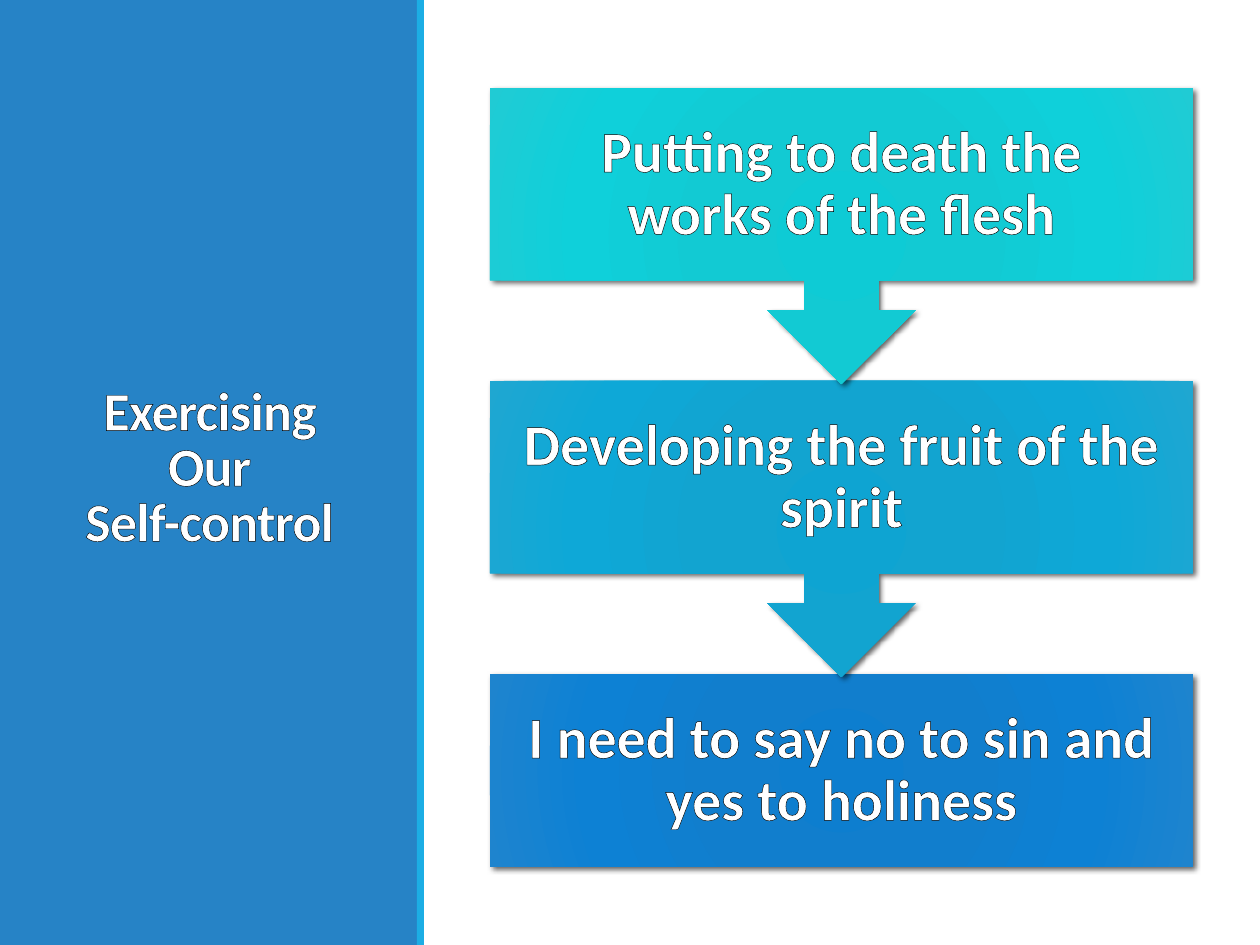
"""Build a slide with a title panel and a three-step downward flow."""
import dataclasses
import typing

import lxml.etree
import pptx
import pptx.dml.color
import pptx.enum.shapes
import pptx.enum.text
import pptx.oxml.ns
import pptx.util

Shape = pptx.enum.shapes.MSO_SHAPE
qn = pptx.oxml.ns.qn
SCALE = 914400 / 126


@dataclasses.dataclass(frozen=True)
class Theme:
    panel: str = "2683C6"
    stripe: str = "1CADE4"
    text: str = "FFFFFF"
    edge: str = "000000"
    font: str = "Calibri"
    title: int = 31
    body: int = 33


class Box(typing.NamedTuple):
    left: int
    top: int
    width: int
    height: int


class Step(typing.NamedTuple):
    text: str
    tints: tuple[str, str, str, str]


class Style(typing.NamedTuple):
    size: int
    inset: int
    lead: float
    track: int = 0


THEME = Theme()
STOPS = (0, 34, 70, 100)
LEFT, TOP, WIDTH, HEIGHT = 490, 88, 703, 193
PITCH, CALL = 293, 296
STEPS = (
    Step("Putting to death the works of the flesh",
         ("0ECBD5", "12CAD3", "0FD0DA", "20CBD4")),
    Step("Developing the fruit of the spirit",
         ("0EA4D2", "12A4D0", "0EA8D7", "1FA7D1")),
    Step("I need to say no to sin and yes to holiness",
         ("0D7ECF", "117ECD", "0D81D4", "1E84CE")),
)


def px(count: int) -> pptx.util.Emu:
    return pptx.util.Emu(round(count * SCALE))


def place(box: Box) -> list[pptx.util.Emu]:
    return [px(part) for part in box]


def node(parent, tag: str, **attrs):
    return lxml.etree.SubElement(
        parent, qn(tag), {key: str(val) for key, val in attrs.items()})


def add_form(slide, kind, box: Box):
    form = slide.shapes.add_shape(kind, *place(box))
    form.line.fill.background()
    form.shadow.inherit = False
    return form


def add_bar(slide, box: Box, tint: str) -> None:
    bar = add_form(slide, Shape.RECTANGLE, box)
    bar.fill.solid()
    bar.fill.fore_color.rgb = pptx.dml.color.RGBColor.from_string(tint)


def add_glow(form, tints: tuple[str, str, str, str]) -> None:
    form.fill.background()
    props = form._element.spPr
    grad = lxml.etree.Element(qn("a:gradFill"), rotWithShape="1")
    stops = node(grad, "a:gsLst")
    for stop, tint in zip(STOPS, tints):
        node(node(stops, "a:gs", pos=stop * 1000), "a:srgbClr", val=tint)
    path = node(grad, "a:path", path="circle")
    node(path, "a:fillToRect", l=100000, t=100000, r=100000, b=100000)
    props.replace(props.find(qn("a:noFill")), grad)


def add_shade(form) -> None:
    shade = node(form._element.spPr.find(qn("a:effectLst")), "a:outerShdw",
                 blurRad=pptx.util.Pt(3), dist=pptx.util.Pt(2),
                 dir=45 * 60000, algn="tl", rotWithShape=0)
    node(node(shade, "a:srgbClr", val=THEME.edge), "a:alpha", val=60000)


def add_text(slide, box: Box, text: str, style: Style) -> None:
    frame = slide.shapes.add_textbox(*place(box)).text_frame
    frame.word_wrap = True
    frame.vertical_anchor = pptx.enum.text.MSO_ANCHOR.MIDDLE
    frame.margin_left = frame.margin_right = px(style.inset)
    frame.margin_top = frame.margin_bottom = px(style.inset)
    para = frame.paragraphs[0]
    para.text = text
    para.alignment = pptx.enum.text.PP_ALIGN.CENTER
    para.line_spacing = style.lead
    for run in para.runs:
        font = run.font
        font.name, font.size = THEME.font, pptx.util.Pt(style.size)
        font.bold = True
        font.color.rgb = pptx.dml.color.RGBColor.from_string(THEME.text)
        props = run._r.get_or_add_rPr()
        if style.track:
            props.set("spc", str(style.track))
        line = node(props, "a:ln", w=pptx.util.Pt(0.75))
        node(node(line, "a:solidFill"), "a:srgbClr", val=THEME.edge)
        props.insert(0, line)


def add_step(slide, rank: int, step: Step) -> None:
    box = Box(LEFT, TOP + rank * PITCH, WIDTH, HEIGHT)
    if rank == len(STEPS) - 1:
        form = add_form(slide, Shape.RECTANGLE, box)
    else:
        form = add_form(slide, Shape.UP_ARROW_CALLOUT, box._replace(height=CALL))
        form.rotation = 180
    add_glow(form, step.tints)
    add_shade(form)
    add_text(slide, box, step.text, Style(THEME.body, 33, 0.9))


def main() -> None:
    deck = pptx.Presentation()
    deck.slide_width, deck.slide_height = px(1260), px(945)
    slide = deck.slides.add_slide(deck.slide_layouts[6])
    add_bar(slide, Box(0, 0, 418, 945), THEME.panel)
    add_text(slide, Box(50, 72, 319, 795), "Exercising Our\vSelf-control",
             Style(THEME.title, 13, 0.85, -50))
    add_bar(slide, Box(417, 0, 7, 945), THEME.stripe)
    for rank, step in reversed(list(enumerate(STEPS))):
        add_step(slide, rank, step)
    deck.save("out.pptx")


if __name__ == "__main__":
    main()
